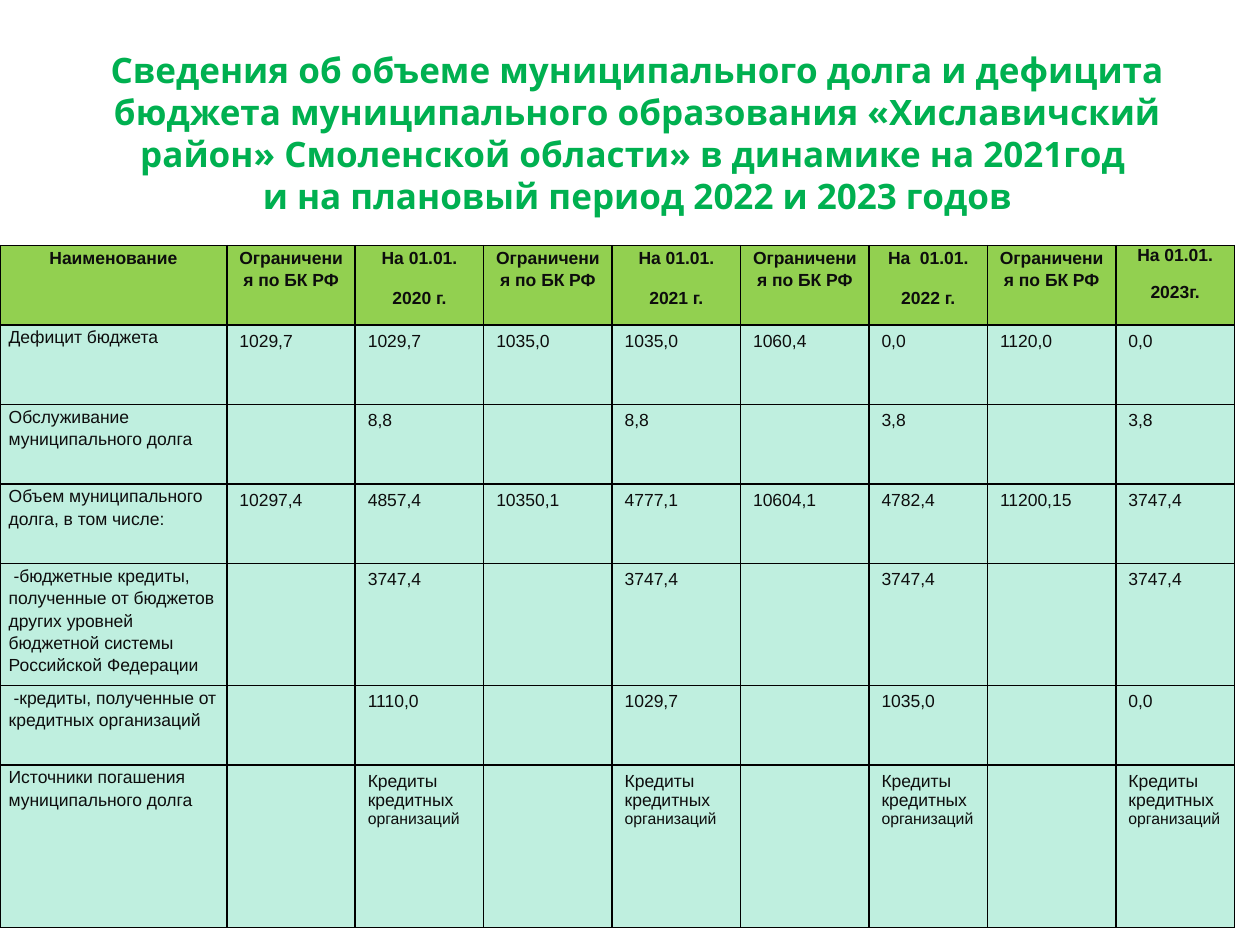
from dataclasses import dataclass

from lxml.etree import SubElement
from pptx import Presentation
from pptx.dml.color import RGBColor
from pptx.enum.text import MSO_ANCHOR as Anchor, PP_ALIGN as Align
from pptx.oxml.ns import qn
from pptx.util import Pt

COLORS = {"title": "00B050", "header": "92D050", "body": "BFEFDF",
          "text": "0D0D0D", "border": "000000"}
LIMIT = "Ограничения по БК РФ"
LIMIT_WIDTH, DATE_WIDTH, LATE_DATE_WIDTH = 73.4, 73.4, 67.7
NAME_WIDTH, ROW_HEIGHT = 129.6, 45.4
TABLE_TOP = 140.4


@dataclass
class Period:
    """A pair of columns: the legal limit and the value on a date."""
    date: str
    year: str
    width: float
    spacing: float = 1.15


@dataclass
class Indicator:
    name: str
    values: list[str]
    height: float = ROW_HEIGHT


PERIODS = [
    Period("На 01.01.", "2020 г.", DATE_WIDTH),
    Period("На 01.01.", "2021 г.", DATE_WIDTH),
    Period("На  01.01.", "2022 г.", LATE_DATE_WIDTH),
    Period("На 01.01.", "2023г.", LATE_DATE_WIDTH, 1.0),
]


def dates_only(values: list[str]) -> list[str]:
    """Put an empty limit before each value."""
    return [text for value in values for text in ("", value)]


INDICATORS = [
    Indicator("Дефицит бюджета",
              ["1029,7", "1029,7", "1035,0", "1035,0", "1060,4", "0,0", "1120,0", "0,0"]),
    Indicator("Обслуживание муниципального долга", dates_only(["8,8", "8,8", "3,8", "3,8"])),
    Indicator("Объем муниципального долга, в том числе:",
              ["10297,4", "4857,4", "10350,1", "4777,1",
               "10604,1", "4782,4", "11200,15", "3747,4"]),
    Indicator(" -бюджетные кредиты, полученные от бюджетов других уровней "
              "бюджетной системы Российской Федерации",
              dates_only(["3747,4"] * 4), 69.8),
    Indicator(" -кредиты, полученные от кредитных организаций",
              dates_only(["1110,0", "1029,7", "1035,0", "0,0"])),
    Indicator("Источники погашения муниципального долга",
              dates_only(["Кредиты кредитных |организаций"] * 4), 92.9),
]


def set_all(target, values: dict) -> None:
    for name, value in values.items():
        setattr(target, name, value)


def color(name: str) -> RGBColor:
    return RGBColor.from_string(COLORS[name])


def add_span(para, text: str, size: float, bold: bool = False,
             font: str = "Arial", tint: str = "text") -> None:
    span = para.add_run()
    span.text = text
    set_all(span.font, {"name": font, "size": Pt(size), "bold": bold})
    span.font.color.rgb = color(tint)


def add_borders(cell) -> None:
    properties = cell._tc.get_or_add_tcPr()
    for index, side in enumerate(("a:lnL", "a:lnR", "a:lnT", "a:lnB")):
        line = SubElement(properties, qn(side), w=str(int(Pt(1))))
        fill = SubElement(line, qn("a:solidFill"))
        SubElement(fill, qn("a:srgbClr"), val=COLORS["border"])
        properties.insert(index, line)


def style_cell(cell, fill: str) -> None:
    cell.fill.solid()
    cell.fill.fore_color.rgb = color(fill)
    add_borders(cell)


def write_label(cell, lines: list[str], header: bool = False, spacing: float = 1.15) -> None:
    """Fill a header or row-name cell, with narrow margins."""
    style_cell(cell, "header" if header else "body")
    set_all(cell, {"margin_left": Pt(5), "margin_right": Pt(5),
                   "margin_top": Pt(0), "margin_bottom": Pt(0)})
    frame = cell.text_frame
    for index, line in enumerate(lines):
        para = frame.add_paragraph() if index else frame.paragraphs[0]
        set_all(para, {"alignment": Align.CENTER if header else Align.LEFT,
                       "line_spacing": spacing, "space_after": Pt(10)})
        add_span(para, line, 10, header)


def write_value(cell, value: str) -> None:
    """Fill a value cell; text after a bar is set smaller."""
    style_cell(cell, "body")
    para = cell.text_frame.paragraphs[0]
    for text, size in zip(value.split("|"), (10, 9)):
        if text:
            add_span(para, text, size)


def add_title(page) -> None:
    title = page.shapes.title
    set_all(title, {"left": Pt(50.4), "top": Pt(22.3), "width": Pt(627.8), "height": Pt(101.5)})
    set_all(title.text_frame, {
        "word_wrap": True, "vertical_anchor": Anchor.BOTTOM,
        "margin_left": Pt(7.2), "margin_right": Pt(7.2),
        "margin_top": Pt(3.6), "margin_bottom": Pt(0)})
    para = title.text_frame.paragraphs[0]
    para.alignment = Align.CENTER
    style = {"size": 20, "bold": True, "font": "Open Sans", "tint": "title"}
    add_span(para, "Сведения об объеме муниципального долга и дефицита бюджета "
             "муниципального образования «Хиславичский район» Смоленской области» "
             "в динамике на 2021год ", **style)
    para.add_line_break()
    add_span(para, "и на плановый период 2022 и 2023 годов", **style)


def add_debt_table(page) -> None:
    widths = [NAME_WIDTH] + [w for period in PERIODS for w in (LIMIT_WIDTH, period.width)]
    heights = [ROW_HEIGHT] + [indicator.height for indicator in INDICATORS]
    table = page.shapes.add_table(len(heights), len(widths), Pt(0), Pt(TABLE_TOP),
                                  Pt(sum(widths)), Pt(sum(heights))).table
    for column, width in zip(table.columns, widths):
        column.width = Pt(width)
    for row, height in zip(table.rows, heights):
        row.height = Pt(height)

    write_label(table.cell(0, 0), ["Наименование"], header=True)
    for index, period in enumerate(PERIODS):
        write_label(table.cell(0, 2 * index + 1), [LIMIT], header=True)
        write_label(table.cell(0, 2 * index + 2), [period.date, period.year],
                    header=True, spacing=period.spacing)
    for row, indicator in enumerate(INDICATORS, 1):
        write_label(table.cell(row, 0), [indicator.name])
        for column, value in enumerate(indicator.values, 1):
            write_value(table.cell(row, column), value)


def main() -> None:
    deck = Presentation()
    set_all(deck, {"slide_width": Pt(720), "slide_height": Pt(540)})
    page = deck.slides.add_slide(deck.slide_layouts[5])
    add_title(page)
    add_debt_table(page)
    deck.save("out.pptx")


if __name__ == "__main__":
    main()
